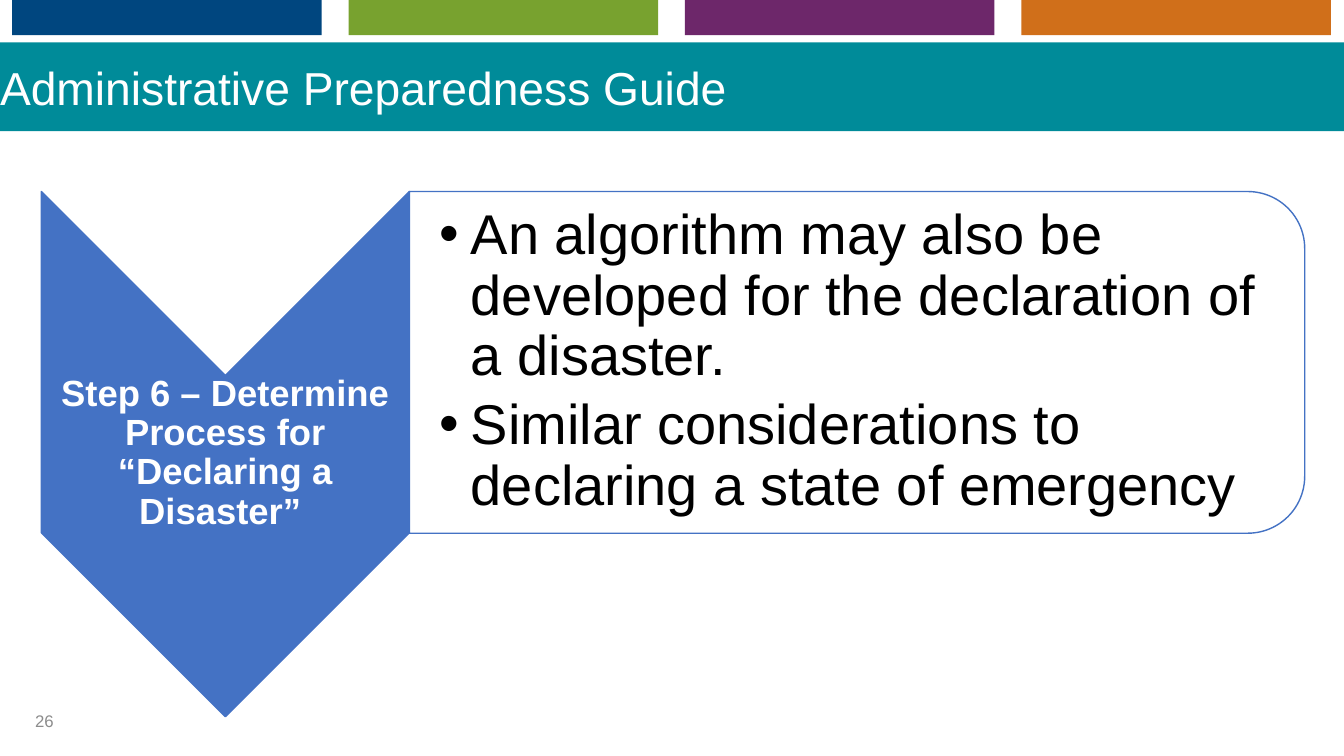
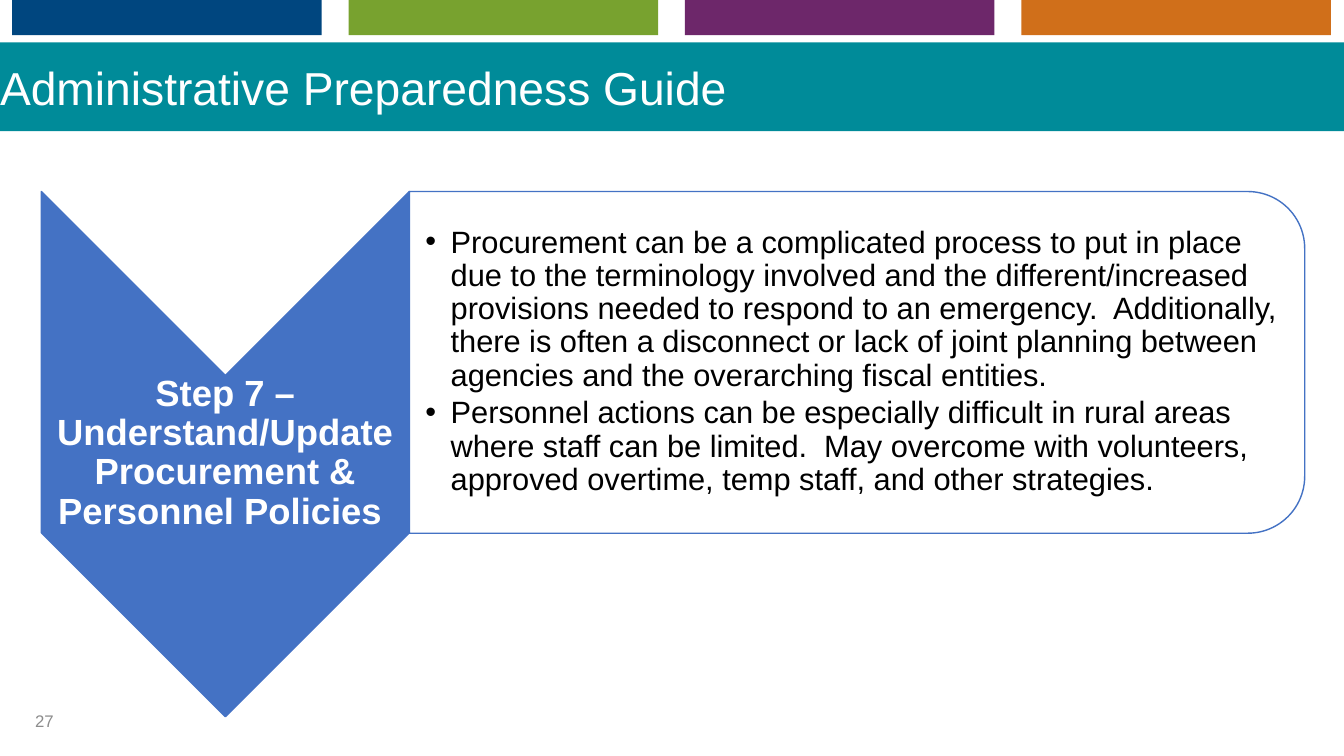
from lxml.etree import SubElement
from pptx import Presentation
from pptx.dml.color import RGBColor
from pptx.enum.shapes import MSO_SHAPE
from pptx.enum.text import MSO_ANCHOR, PP_ALIGN
from pptx.oxml.ns import qn
from pptx.util import Inches, Pt

FONT = "Arial"
COLORS = {
    "title_band": "008B99",
    "navy": "00467F",
    "green": "78A22F",
    "purple": "6D276A",
    "orange": "D06F1A",
    "step": "4472C4",
    "white": "FFFFFF",
    "black": "000000",
    "number": "8C8C8C",
}
TABS = ["navy", "green", "purple", "orange"]
TITLE = "Administrative Preparedness Guide"
STEPS = [
    {
        "number": "26",
        "step": "Step 6 – Determine Process for “Declaring a Disaster” ",
        "bullets": [
            "An algorithm may also be developed for the declaration of a disaster.",
            "Similar considerations to declaring a state of emergency",
        ],
        "size": 40, "indent": 0.31, "left_inset": 0.31, "inset": 0.03,
    },
    {
        "number": "27",
        "step": "Step 7 – Understand/Update Procurement & Personnel Policies ",
        "bullets": [
            "Procurement can be a complicated process to put in place due to the "
            "terminology involved and the different/increased provisions needed to "
            "respond to an emergency.  Additionally, there is often a disconnect or "
            "lack of joint planning between agencies and the overarching fiscal entities.",
            "Personnel actions can be especially difficult in rural areas where staff "
            "can be limited.  May overcome with volunteers, approved overtime, temp "
            "staff, and other strategies.",
        ],
        "size": 22, "indent": 0.25, "left_inset": 0.17, "inset": 0.02,
    },
]


def color(name):
    return RGBColor.from_string(COLORS[name])


def add_block(slide, kind, left, top, width, height, fill, line=None):
    shape = slide.shapes.add_shape(
        kind, Inches(left), Inches(top), Inches(width), Inches(height))
    shape.shadow.inherit = False
    shape.fill.solid()
    shape.fill.fore_color.rgb = color(fill)
    if line:
        shape.line.color.rgb = color(line)
        shape.line.width = Pt(1)
    else:
        shape.line.fill.background()
    return shape


def add_turned_block(slide, kind, left, top, width, height, fill, line):
    """Add a shape turned a quarter clockwise that covers the given area."""
    shift = (width - height) / 2
    shape = add_block(slide, kind, left + shift, top - shift, height, width, fill, line)
    shape.rotation = 90
    return shape


def add_text_frame(slide, left, top, width, height, insets, anchor=MSO_ANCHOR.MIDDLE):
    frame = slide.shapes.add_textbox(
        Inches(left), Inches(top), Inches(width), Inches(height)).text_frame
    frame.word_wrap = True
    frame.vertical_anchor = anchor
    frame.margin_left, frame.margin_top, frame.margin_right, frame.margin_bottom = (
        Inches(inset) for inset in insets)
    return frame


def add_run(paragraph, text, size, color_name, bold=False):
    run = paragraph.add_run()
    run.text = text
    run.font.name = FONT
    run.font.size = Pt(size)
    run.font.bold = bold
    run.font.color.rgb = color(color_name)


def set_bullet(paragraph, indent):
    properties = paragraph._p.get_or_add_pPr()
    properties.set("marL", str(Inches(indent)))
    properties.set("indent", str(-Inches(indent)))
    SubElement(properties, qn("a:buFont")).set("typeface", FONT)
    SubElement(properties, qn("a:buChar")).set("char", "•")


def add_header(slide):
    # Title band and the four coloured tabs above it
    add_block(slide, MSO_SHAPE.RECTANGLE, 0, 0.42, 13.33, 0.88, "title_band")
    for index, name in enumerate(TABS):
        add_block(slide, MSO_SHAPE.RECTANGLE, 0.12 + index * 3.337, 0, 3.07, 0.35, name)
    # Title
    frame = add_text_frame(slide, 0, 0.54, 13.08, 0.66, (0, 0.05, 0.1, 0.05), MSO_ANCHOR.TOP)
    add_run(frame.paragraphs[0], TITLE, 33, "white")


def add_step(slide, text):
    add_turned_block(slide, MSO_SHAPE.CHEVRON, 0.41, 1.9, 3.65, 5.21, "step", "step")
    frame = add_text_frame(slide, 0.41, 3.72, 3.65, 1.56, [0.02] * 4)
    paragraph = frame.paragraphs[0]
    paragraph.alignment = PP_ALIGN.CENTER
    paragraph.line_spacing = 0.9
    add_run(paragraph, text, 26, "white", bold=True)


def add_details(slide, content):
    add_turned_block(slide, MSO_SHAPE.ROUND_2_SAME_RECTANGLE,
                     4.06, 1.9, 8.88, 3.39, "white", "step")
    inset = content["inset"]
    frame = add_text_frame(slide, 4.05, 2.06, 8.71, 3.06,
                           (content["left_inset"], inset, inset, inset))
    for index, text in enumerate(content["bullets"]):
        paragraph = frame.add_paragraph() if index else frame.paragraphs[0]
        paragraph.line_spacing = 0.9
        paragraph.space_after = Pt(0.15 * content["size"])
        set_bullet(paragraph, content["indent"])
        add_run(paragraph, text, content["size"], "black")


def add_slide_number(slide, number):
    frame = add_text_frame(slide, 0.25, 6.95, 3, 0.4, (0.1, 0.05, 0.1, 0.05))
    add_run(frame.paragraphs[0], number, 12, "number")


def main():
    presentation = Presentation()
    presentation.slide_width = Inches(13.33)
    presentation.slide_height = Inches(7.5)
    for content in STEPS:
        slide = presentation.slides.add_slide(presentation.slide_layouts[6])
        add_header(slide)
        add_step(slide, content["step"])
        add_details(slide, content)
        add_slide_number(slide, content["number"])
    presentation.save("out.pptx")


if __name__ == "__main__":
    main()
